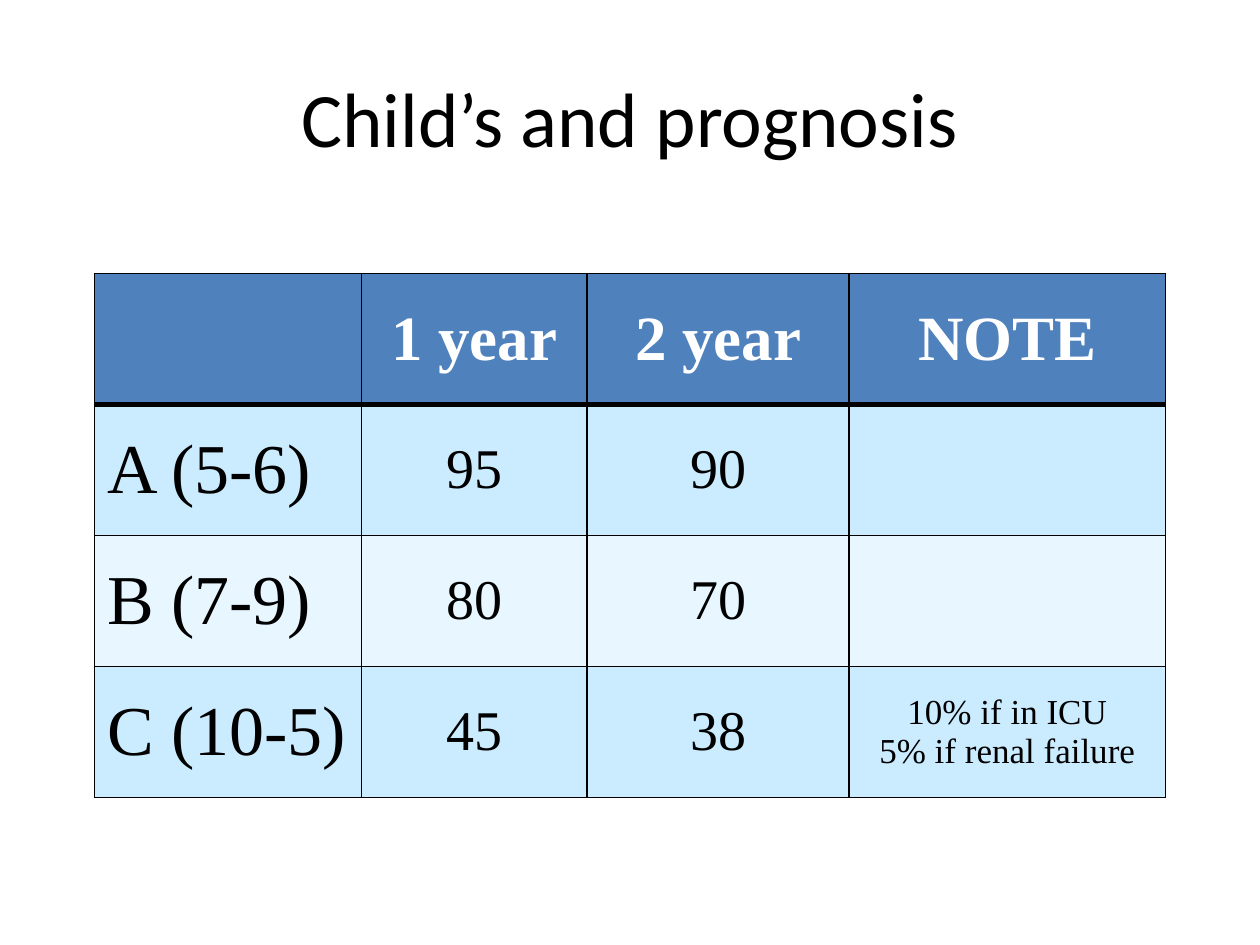
"""Build a slide with a table of survival by Child's class."""
import dataclasses

import lxml.etree
import pptx
import pptx.dml.color
import pptx.enum.text
import pptx.oxml.ns
import pptx.slide
import pptx.table
import pptx.util

ALIGN = pptx.enum.text.PP_ALIGN
ANCHOR = pptx.enum.text.MSO_ANCHOR


@dataclasses.dataclass(frozen=True)
class Theme:
    title_font: str = "Calibri"
    table_font: str = "Times New Roman"
    ink: str = "000000"
    header_ink: str = "FFFFFF"
    header_fill: str = "4F81BD"
    bands: tuple[str, str] = ("CBECFF", "E7F6FF")
    title_size: int = 44
    header_size: int = 36
    class_size: int = 40
    value_size: int = 32
    note_size: int = 20
    thin_line: int = 1
    header_line: int = 3


@dataclasses.dataclass(frozen=True)
class Prognosis:
    child_class: str
    one_year: str
    two_year: str
    note: str = ""


@dataclasses.dataclass(frozen=True)
class CellStyle:
    size: int
    color: str
    fill: str
    align: ALIGN = ALIGN.CENTER
    bold: bool = False
    top: int = 1
    bottom: int = 1


THEME = Theme()
SLIDE_WIDTH = pptx.util.Inches(10)
SLIDE_HEIGHT = pptx.util.Inches(7.5)
HEADINGS = ("", "1 year", "2 year", "NOTE")
COLUMN_WIDTHS = (2.12, 1.79, 2.08, 2.51)
ROW_HEIGHT = 1.04
PROGNOSES = (
    Prognosis("A (5-6)", "95", "90"),
    Prognosis("B (7-9)", "80", "70"),
    Prognosis("C (10-5)", "45", "38", "10% if in ICU\n5% if renal failure"),
)


def rgb(color: str) -> pptx.dml.color.RGBColor:
    """Turn a hexadecimal string into a colour."""
    return pptx.dml.color.RGBColor.from_string(color)


def style_text(frame, font: str, size: int, color: str, align: ALIGN, bold: bool = False) -> None:
    """Format every paragraph of a text frame alike."""
    for para in frame.paragraphs:
        para.alignment = align
        para.font.name = font
        para.font.size = pptx.util.Pt(size)
        para.font.bold = bold
        para.font.color.rgb = rgb(color)


def draw_borders(cell: pptx.table._Cell, top: int, bottom: int) -> None:
    """Draw the four borders of a cell, with side lines of thin width."""
    properties = cell._tc.get_or_add_tcPr()
    widths = {"L": THEME.thin_line, "R": THEME.thin_line, "T": top, "B": bottom}
    for place, (side, width) in enumerate(widths.items()):
        line = lxml.etree.Element(pptx.oxml.ns.qn(f"a:ln{side}"), w=str(pptx.util.Pt(width)))
        fill = lxml.etree.SubElement(line, pptx.oxml.ns.qn("a:solidFill"))
        lxml.etree.SubElement(fill, pptx.oxml.ns.qn("a:srgbClr"), val=THEME.ink)
        properties.insert(place, line)


def fill_cell(cell: pptx.table._Cell, text: str, style: CellStyle) -> None:
    """Write and format one table cell."""
    cell.vertical_anchor = ANCHOR.MIDDLE
    cell.fill.solid()
    cell.fill.fore_color.rgb = rgb(style.fill)
    draw_borders(cell, style.top, style.bottom)
    if text:
        cell.text = text
        style_text(cell.text_frame, THEME.table_font, style.size, style.color, style.align, style.bold)


def add_title(page: pptx.slide.Slide, text: str) -> None:
    """Place and format the slide title."""
    title = page.shapes.title
    title.left, title.width = int(SLIDE_WIDTH * 0.05), int(SLIDE_WIDTH * 0.9)
    title.top, title.height = int(SLIDE_HEIGHT * 0.04), int(SLIDE_HEIGHT / 6)
    title.text = text
    title.text_frame.vertical_anchor = ANCHOR.MIDDLE
    style_text(title.text_frame, THEME.title_font, THEME.title_size, THEME.ink, ALIGN.CENTER)


def add_prognosis_table(page: pptx.slide.Slide) -> None:
    """Add the table with a header row and banded class rows."""
    row_count = len(PROGNOSES) + 1
    width = pptx.util.Inches(sum(COLUMN_WIDTHS))
    table = page.shapes.add_table(
        row_count, len(HEADINGS), (SLIDE_WIDTH - width) // 2, pptx.util.Inches(2.17),
        width, pptx.util.Inches(ROW_HEIGHT * row_count),
    ).table
    for column, column_width in zip(table.columns, COLUMN_WIDTHS):
        column.width = pptx.util.Inches(column_width)

    header = CellStyle(THEME.header_size, THEME.header_ink, THEME.header_fill,
                       bold=True, bottom=THEME.header_line)
    for column, heading in enumerate(HEADINGS):
        fill_cell(table.cell(0, column), heading, header)

    sizes = (THEME.class_size, THEME.value_size, THEME.value_size, THEME.note_size)
    for row, prognosis in enumerate(PROGNOSES, start=1):
        for column, text in enumerate(dataclasses.astuple(prognosis)):
            style = CellStyle(
                sizes[column], THEME.ink, THEME.bands[(row - 1) % 2],
                align=ALIGN.CENTER if column else ALIGN.LEFT,
                top=THEME.header_line if row == 1 else THEME.thin_line,
            )
            fill_cell(table.cell(row, column), text, style)


def main() -> None:
    """Build and save the deck."""
    deck = pptx.Presentation()
    deck.slide_width, deck.slide_height = SLIDE_WIDTH, SLIDE_HEIGHT
    page = deck.slides.add_slide(deck.slide_layouts.get_by_name("Title Only"))
    add_title(page, "Child’s and prognosis")
    add_prognosis_table(page)
    deck.save("out.pptx")


if __name__ == "__main__":
    main()
